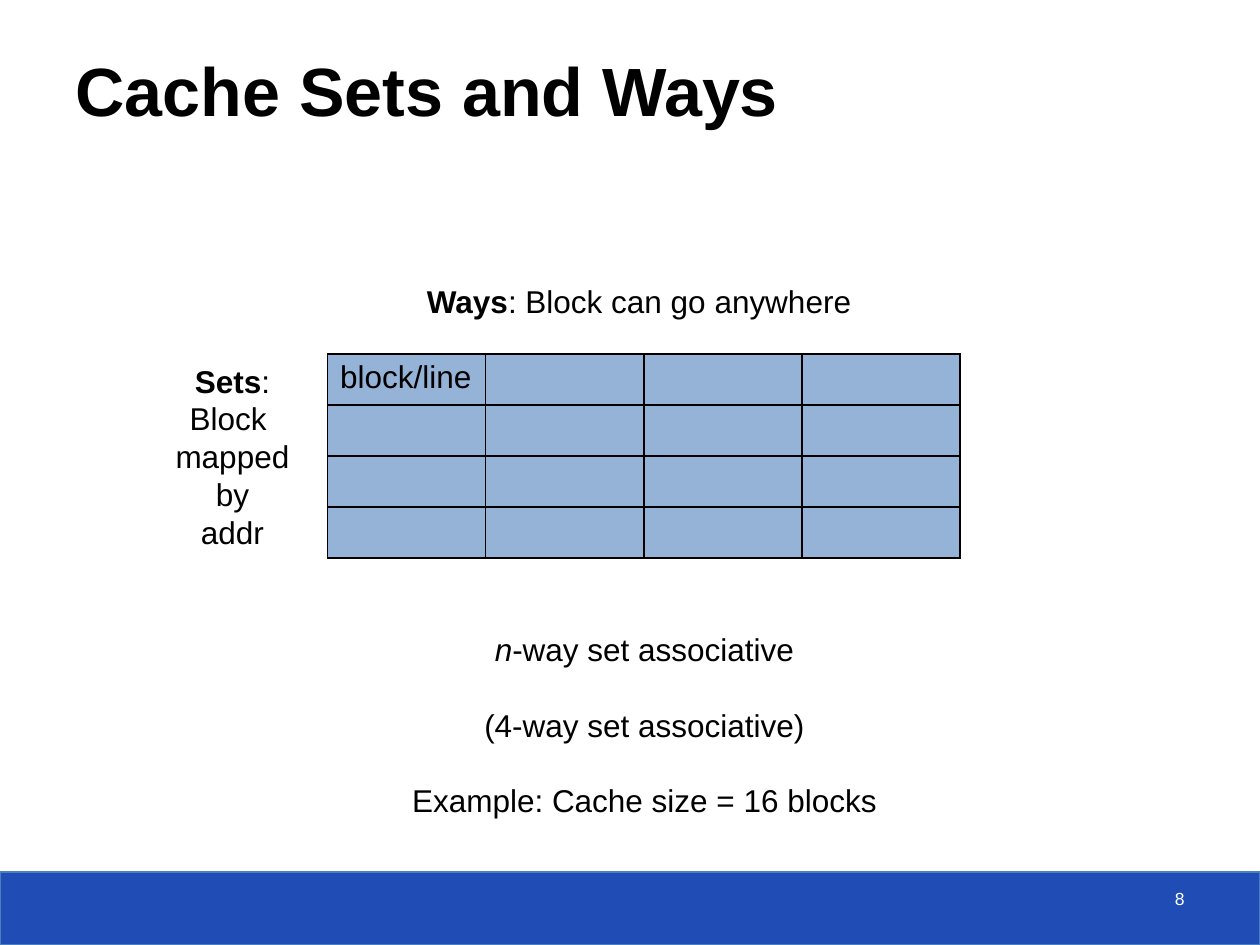
from lxml import etree
from pptx import Presentation
from pptx.dml.color import RGBColor
from pptx.enum.shapes import MSO_SHAPE
from pptx.enum.text import MSO_ANCHOR, PP_ALIGN
from pptx.oxml import parse_xml
from pptx.oxml.ns import nsdecls, qn
from pptx.util import Inches, Pt

RECTANGLE = MSO_SHAPE.RECTANGLE
LEFT, CENTER, RIGHT = PP_ALIGN.LEFT, PP_ALIGN.CENTER, PP_ALIGN.RIGHT
TOP, BOTTOM = MSO_ANCHOR.TOP, MSO_ANCHOR.BOTTOM

THEME = {
    "font": "Arial",
    "black": "000000",
    "white": "FFFFFF",
    "footer": "204DB5",
    "footer_line": "4B7EBC",
    "block": "95B3D7",
    "title_size": 39,
    "body_size": 18,
    "number_size": 10,
    "body_leading": 21.6,
}

TITLE = [[("Cache Sets and Ways", "b")]]
PAGE_NUMBER = [[("8", "")]]
SETS = [[("Sets", "b"), (":\nBlock \nmapped\nby\naddr", "")]]
WAYS = [[("Ways", "b"), (": Block can go anywhere", "")]]
SUMMARY = [
    [("n", "i"), ("-way set associative", "")],
    [("(4-way set associative)", "")],
    [("Example: Cache size = 16 blocks", "")],
]
CACHE = [["block/line", "", "", ""]] + [[""] * 4 for _ in range(3)]
CACHE_BOX = (2.6, 2.81, 5.02, 1.62)


def color(name):
    return RGBColor.from_string(THEME[name])


def write_text(frame, paragraphs, size="body_size", ink="black", align=LEFT,
               anchor=TOP, wrap=True, leading=None, gap=0):
    frame.word_wrap = wrap
    frame.vertical_anchor = anchor
    for index, parts in enumerate(paragraphs):
        paragraph = frame.add_paragraph() if index else frame.paragraphs[0]
        paragraph.alignment = align
        if leading:
            paragraph.line_spacing = Pt(leading)
        if index:
            paragraph.space_before = Pt(gap)
        for text, style in parts:
            for line_index, line in enumerate(text.split("\n")):
                if line_index:
                    paragraph.add_line_break()
                run = paragraph.add_run()
                run.text = line
                run.font.name = THEME["font"]
                run.font.size = Pt(THEME[size])
                run.font.color.rgb = color(ink)
                run.font.bold = style == "b"
                run.font.italic = style == "i"


def add_text(slide, box, paragraphs, **text_format):
    shape = slide.shapes.add_textbox(*map(Inches, box))
    write_text(shape.text_frame, paragraphs, **text_format)


def add_rectangle(slide, box, fill):
    shape = slide.shapes.add_shape(RECTANGLE, *map(Inches, box))
    shape.shadow.inherit = False
    shape.fill.solid()
    shape.fill.fore_color.rgb = color(fill)
    return shape


def format_cell(cell, text):
    properties = cell._tc.get_or_add_tcPr()
    for side in ("lnL", "lnR", "lnT", "lnB"):
        properties.append(parse_xml(
            f'<a:{side} {nsdecls("a")} w="12700"><a:solidFill>'
            f'<a:srgbClr val="{THEME["black"]}"/></a:solidFill></a:{side}>'))
    cell.fill.solid()
    cell.fill.fore_color.rgb = color("block")
    if text:
        write_text(cell.text_frame, [[(text, "")]])


def add_cache(slide):
    left, top, width, height = map(Inches, CACHE_BOX)
    rows, columns = len(CACHE), len(CACHE[0])
    table = slide.shapes.add_table(rows, columns, left, top, width, height).table
    table.first_row = table.horz_banding = False
    for column in table.columns:
        column.width = width // columns
    for row, texts in zip(table.rows, CACHE):
        row.height = height // rows
        for cell, text in zip(row.cells, texts):
            format_cell(cell, text)


def main():
    presentation = Presentation()
    presentation.slide_width, presentation.slide_height = Inches(10), Inches(7.5)
    slide = presentation.slides.add_slide(presentation.slide_layouts[6])

    footer = add_rectangle(slide, (0, 6.92, 10, 0.58), "footer")
    footer.line.color.rgb = color("footer_line")
    footer.line.width = Pt(0.75)

    title = add_rectangle(slide, (0.5, 0.25, 9.22, 0.83), "white")
    title.line.fill.background()
    fill_color = title._element.spPr.find(qn("a:solidFill"))[0]
    etree.SubElement(fill_color, qn("a:alpha"), val="75000")
    write_text(title.text_frame, TITLE, size="title_size", anchor=BOTTOM)

    add_text(slide, (7.17, 7, 2.33, 0.33), PAGE_NUMBER,
             size="number_size", ink="white", align=RIGHT)
    add_cache(slide)

    leading = THEME["body_leading"]
    add_text(slide, (1.29, 2.82, 1.11, 1.62), SETS,
             align=CENTER, wrap=False, leading=leading)
    add_text(slide, (3.29, 2.19, 3.64, 0.4), WAYS, wrap=False, leading=leading)
    add_text(slide, (3.15, 4.95, 3.93, 1.62), SUMMARY,
             align=CENTER, wrap=False, leading=leading, gap=leading)

    presentation.save("out.pptx")


if __name__ == "__main__":
    main()
